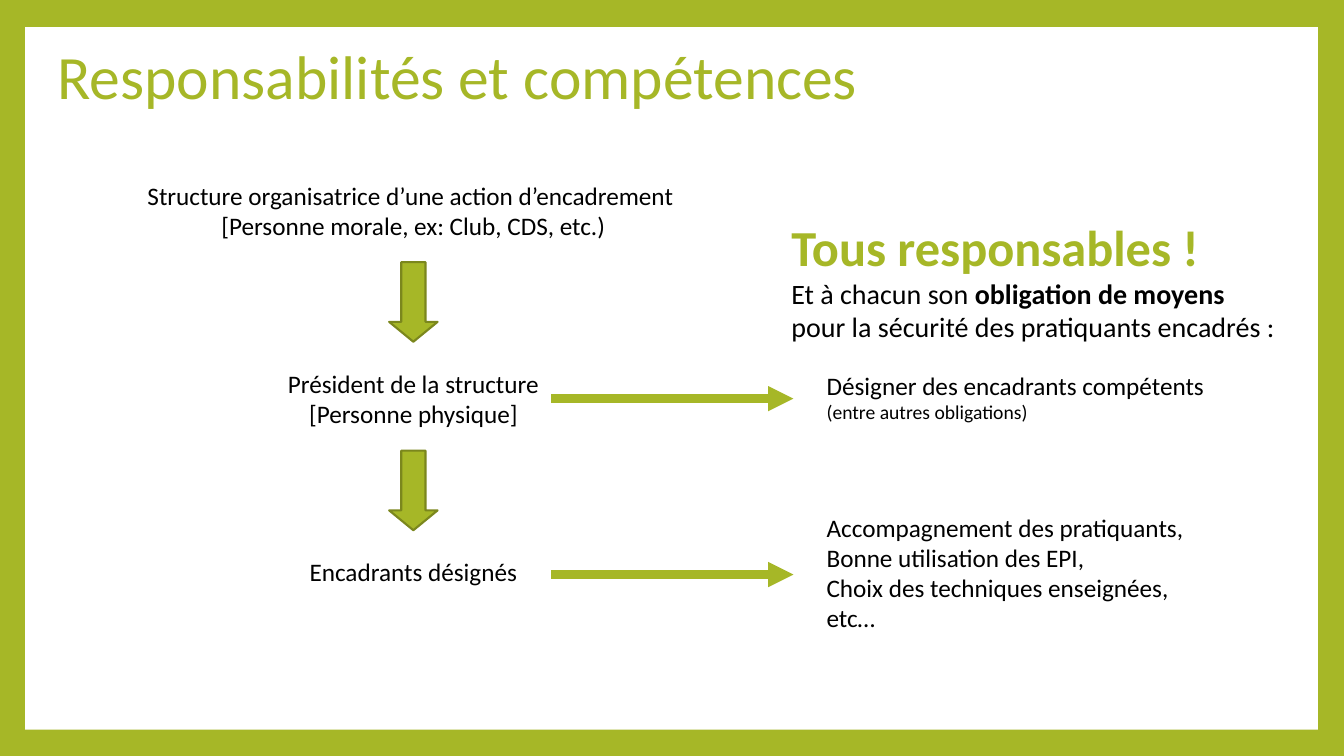
from lxml import etree
from pptx import Presentation
from pptx.dml.color import RGBColor
from pptx.enum.shapes import MSO_CONNECTOR, MSO_SHAPE
from pptx.enum.text import MSO_ANCHOR, MSO_AUTO_SIZE, PP_ALIGN
from pptx.oxml.ns import qn
from pptx.util import Inches, Pt

STRAIGHT = MSO_CONNECTOR.STRAIGHT
RECTANGLE, DOWN_ARROW = MSO_SHAPE.RECTANGLE, MSO_SHAPE.DOWN_ARROW
MIDDLE, FIT = MSO_ANCHOR.MIDDLE, MSO_AUTO_SIZE.SHAPE_TO_FIT_TEXT
LEFT, CENTER = PP_ALIGN.LEFT, PP_ALIGN.CENTER
GREEN, DARK_GREEN, BLACK, WHITE = "A6B727", "7B871D", "000000", "FFFFFF"
FONT = "Calibri"
RIGHT_SIDE = 3


def color(hex_code):
    return RGBColor.from_string(hex_code)


def add_text(box, paragraphs, align, wrap):
    left, top, width, height = box
    label = slide.shapes.add_textbox(Inches(left), Inches(top), Inches(width), Inches(height))
    frame = label.text_frame
    frame.word_wrap = wrap
    frame.auto_size = FIT
    for index, pieces in enumerate(paragraphs):
        paragraph = frame.add_paragraph() if index else frame.paragraphs[0]
        paragraph.alignment = align
        for text, size, bold, hex_code in pieces:
            run = paragraph.add_run()
            run.text = text
            run.font.name = FONT
            run.font.size = Pt(size)
            run.font.bold = bold
            run.font.color.rgb = color(hex_code)
    return label


prs = Presentation()
prs.slide_width, prs.slide_height = Inches(13.33), Inches(7.5)
slide = prs.slides.add_slide(prs.slide_layouts[5])
slide.background.fill.solid()
slide.background.fill.fore_color.rgb = color(GREEN)

panel = slide.shapes.add_shape(RECTANGLE, Inches(0.25), Inches(0.27), Inches(12.82), Inches(6.97))
panel.shadow.inherit = False
panel.fill.solid()
panel.fill.fore_color.rgb = color(WHITE)
panel.line.fill.background()

title = slide.shapes.title
panel.element.getparent().remove(panel.element)
title.element.addprevious(panel.element)
title.left, title.top, title.width, title.height = Inches(0.47), Inches(0.4), Inches(12.44), Inches(0.78)
title.text_frame.text = "Responsabilités et compétences"
title.text_frame.vertical_anchor = MIDDLE
heading = title.text_frame.paragraphs[0]
heading.alignment = LEFT
heading.line_spacing = 0.9
heading.runs[0].font.name = FONT
heading.runs[0].font.size = Pt(44)
heading.runs[0].font.color.rgb = color(GREEN)

CHAIN_X = 4.1
chain = [
    (1.74, 5.6, 0.71, ["Structure organisatrice d’une action d’encadrement ", "[Personne morale, ex: Club, CDS, etc.)"]),
    (3.6, 2.74, 0.71, ["Président de la structure", "[Personne physique]"]),
    (5.47, 2.34, 0.4, ["Encadrants désignés"]),
]
actors = []
for top, width, height, lines in chain:
    paragraphs = [[(line, 18, False, BLACK)] for line in lines]
    actors.append(add_text((CHAIN_X - width / 2, top, width, height), paragraphs, CENTER, False))
structure, president, instructors = actors

ARROW_WIDTH, ARROW_HEIGHT = 0.48, 0.79
for top in (2.6, 4.47):
    delegation = slide.shapes.add_shape(
        DOWN_ARROW, Inches(CHAIN_X - ARROW_WIDTH / 2), Inches(top), Inches(ARROW_WIDTH), Inches(ARROW_HEIGHT))
    delegation.shadow.inherit = False
    delegation.adjustments[0] = 0.5
    delegation.adjustments[1] = 0.41
    delegation.fill.solid()
    delegation.fill.fore_color.rgb = color(GREEN)
    delegation.line.color.rgb = color(DARK_GREEN)
    delegation.line.width = Pt(1.5)

add_text((7.75, 2.09, 5.08, 1.38), [
    [("Tous responsables !", 36, True, GREEN)],
    [("Et à chacun son ", 20, False, BLACK),
     ("obligation de moyens ", 20, True, BLACK),
     ("pour la sécurité des pratiquants encadrés :", 20, False, BLACK)],
], LEFT, True)
add_text((8.1, 3.62, 4.43, 0.64), [
    [("Désigner des encadrants compétents", 18, False, BLACK),
     (" (entre autres obligations)", 14, False, BLACK)],
], LEFT, True)
add_text((8.1, 5.03, 4.33, 1.31), [
    [(line, 18, False, BLACK)] for line in (
        "Accompagnement des pratiquants, Bonne utilisation des EPI,",
        "Choix des techniques enseignées,",
        "etc…")
], LEFT, True)

for y, source in ((3.95, president), (5.7, None)):
    duty = slide.shapes.add_connector(STRAIGHT, Inches(5.47), Inches(y), Inches(7.87), Inches(y))
    if source is not None:
        duty.begin_connect(source, RIGHT_SIDE)
        duty.end_y = duty.begin_y
    duty.line.color.rgb = color(GREEN)
    duty.line.width = Pt(6)
    etree.SubElement(duty.line._get_or_add_ln(), qn("a:tailEnd"), type="triangle")
    etree.SubElement(duty.element.spPr, qn("a:effectLst"))

prs.save("out.pptx")
